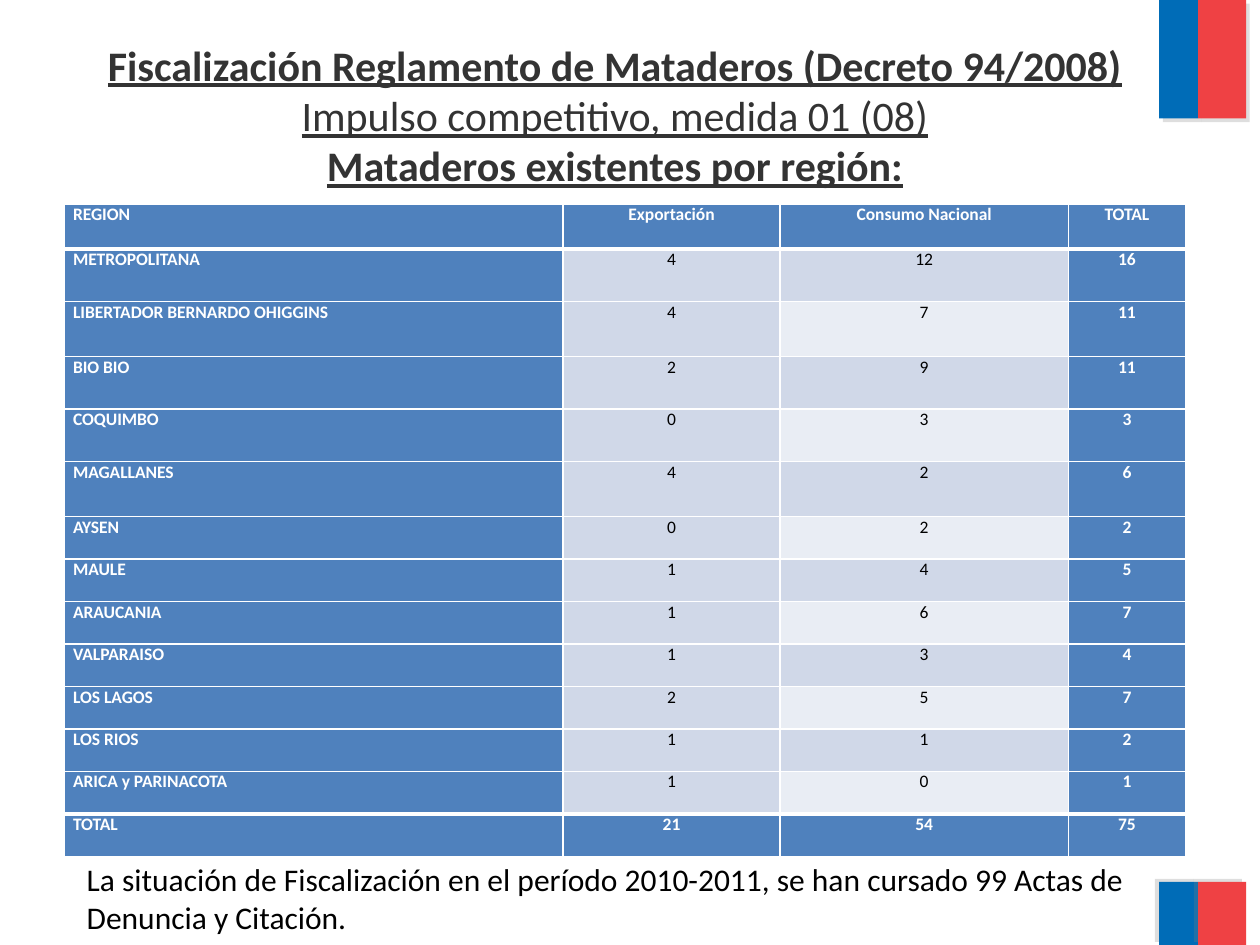
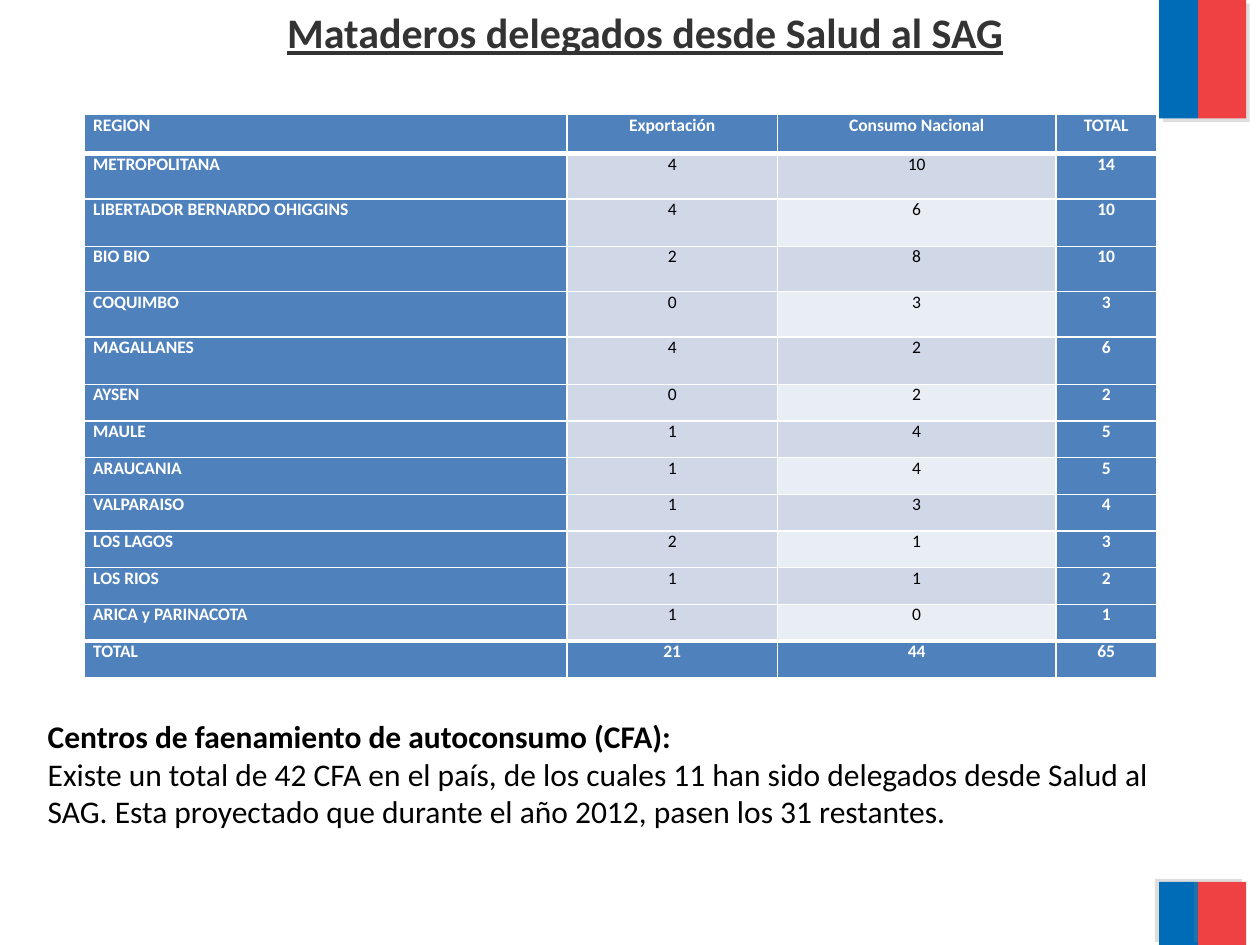
import lxml.etree
import pptx
import pptx.dml.color
import pptx.enum.shapes
import pptx.enum.text
import pptx.oxml
import pptx.oxml.ns
import pptx.util

Inches = pptx.util.Inches
Pt = pptx.util.Pt
ALIGN = pptx.enum.text.PP_ALIGN

COLORS = {
    "flag_blue": "006CB7",
    "flag_red": "EF4144",
    "shadow": "808080",
    "title": "333333",
    "text": "000000",
    "white": "FFFFFF",
    "header": "4F81BD",
    "band_dark": "D0D8E8",
    "band_light": "E9EDF4",
}
FONT = "Calibri"
HEADINGS = ["REGION", "Exportación", "Consumo Nacional", "TOTAL"]
REGIONS = [
    "METROPOLITANA", "LIBERTADOR BERNARDO OHIGGINS", "BIO BIO", "COQUIMBO",
    "MAGALLANES", "AYSEN", "MAULE", "ARAUCANIA", "VALPARAISO", "LOS LAGOS",
    "LOS RIOS", "ARICA y PARINACOTA",
]
EXPORT = [4, 4, 2, 0, 4, 0, 1, 1, 1, 2, 1, 1]
NATIONAL_EXISTING = [12, 7, 9, 3, 2, 2, 4, 6, 3, 5, 1, 0]
NATIONAL_DELEGATED = [10, 6, 8, 3, 2, 2, 4, 4, 3, 1, 1, 0]
ROW_WEIGHTS = [0.36, 0.42, 0.44, 0.42, 0.42, 0.44] + [0.34] * 8


def region_rows(national):
    """Return the table rows with the totals worked out."""
    rows = [
        [region, exported, consumed, exported + consumed]
        for region, exported, consumed in zip(REGIONS, EXPORT, national)
    ]
    totals = [sum(column) for column in list(zip(*rows))[1:]]
    return [HEADINGS, *rows, ["TOTAL", *totals]]


class SlideBuilder:
    """Hold the shared style and the slide being built."""

    def __init__(self, presentation):
        """Keep the presentation that receives the slides."""
        self.presentation = presentation
        self.slide = None

    def color(self, name):
        """Return a named colour."""
        return pptx.dml.color.RGBColor.from_string(COLORS[name])

    def start(self):
        """Add a slide with the flag bands at its right edge."""
        self.slide = self.presentation.slides.add_slide(
            self.presentation.slide_layouts[5])
        for top, height, angle in ((0, 0.94, 45), (7, 0.5, 215)):
            self.band(9.2, top, 0.31, height, "flag_blue", angle)
            self.band(9.51, top, 0.38, height, "flag_red", angle)

    def band(self, left, top, width, height, color, angle):
        """Add a flag band with a soft shadow."""
        shape = self.slide.shapes.add_shape(
            pptx.enum.shapes.MSO_SHAPE.RECTANGLE,
            Inches(left), Inches(top), Inches(width), Inches(height))
        shape.fill.solid()
        shape.fill.fore_color.rgb = self.color(color)
        shape.line.fill.background()
        shape.shadow.inherit = False
        effects = shape.element.spPr.find(pptx.oxml.ns.qn("a:effectLst"))
        effects.append(pptx.oxml.parse_xml(
            f'<a:outerShdw {pptx.oxml.ns.nsdecls("a")} blurRad="0" '
            f'dist="{Pt(3)}" dir="{angle * 60000}" algn="ctr" rotWithShape="0">'
            f'<a:srgbClr val="{COLORS["shadow"]}"><a:alpha val="25000"/>'
            '</a:srgbClr></a:outerShdw>'))

    def fill_text(self, frame, lines, size, color, align, underline=False):
        """Fill a text frame with (text, bold) paragraphs."""
        frame.word_wrap = True
        frame.auto_size = pptx.enum.text.MSO_AUTO_SIZE.NONE
        frame.vertical_anchor = pptx.enum.text.MSO_ANCHOR.TOP
        frame.text = "\n".join(text for text, bold in lines)
        for paragraph, (text, bold) in zip(frame.paragraphs, lines):
            paragraph.alignment = align
            self.style(paragraph, size, color, bold)
            paragraph.font.underline = underline

    def style(self, paragraph, size, color, bold):
        """Set the font of a paragraph."""
        paragraph.font.name = FONT
        paragraph.font.size = Pt(size)
        paragraph.font.bold = bold
        paragraph.font.color.rgb = self.color(color)

    def title(self, left, top, width, height, lines):
        """Place and fill the title placeholder."""
        title = self.slide.shapes.title
        title.left, title.top = Inches(left), Inches(top)
        title.width, title.height = Inches(width), Inches(height)
        self.fill_text(title.text_frame, lines, 24, "title", ALIGN.CENTER, True)

    def note(self, left, top, width, height, lines, align=ALIGN.LEFT):
        """Add a text box below the table."""
        box = self.slide.shapes.add_textbox(
            Inches(left), Inches(top), Inches(width), Inches(height))
        self.fill_text(box.text_frame, lines, 18, "text", align)

    def table(self, left, top, height, column_widths, rows):
        """Add the table of slaughterhouses by region."""
        table = self.slide.shapes.add_table(
            len(rows), len(column_widths), Inches(left), Inches(top),
            Inches(sum(column_widths)), Inches(height)).table
        for column, width in zip(table.columns, column_widths):
            column.width = Inches(width)
        for row, weight in zip(table.rows, ROW_WEIGHTS):
            row.height = Inches(height * weight / sum(ROW_WEIGHTS))
        last = len(rows) - 1
        for row_index, values in enumerate(rows):
            top_width = 3 if row_index in (1, last) else 1
            bottom_width = 3 if row_index in (0, last - 1) else 1
            for column_index, value in enumerate(values):
                cell = table.cell(row_index, column_index)
                heading = row_index in (0, last) or column_index in (0, 3)
                if heading:
                    fill = "header"
                elif column_index == 1 or row_index % 2:
                    fill = "band_dark"
                else:
                    fill = "band_light"
                self.borders(cell, top_width, bottom_width)
                self.cell(cell, str(value), fill, heading, column_index == 0)

    def cell(self, cell, text, fill, heading, first_column):
        """Fill and format one table cell."""
        cell.fill.solid()
        cell.fill.fore_color.rgb = self.color(fill)
        cell.margin_left = cell.margin_right = Inches(0.07)
        cell.margin_top = cell.margin_bottom = 0
        cell.text = text
        paragraph = cell.text_frame.paragraphs[0]
        paragraph.alignment = ALIGN.JUSTIFY if first_column else ALIGN.CENTER
        self.style(paragraph, 10, "white" if heading else "text", heading)

    def borders(self, cell, top_width, bottom_width):
        """Draw the white borders of a cell."""
        qn = pptx.oxml.ns.qn
        properties = cell._tc.get_or_add_tcPr()
        widths = {"lnL": 1, "lnR": 1, "lnT": top_width, "lnB": bottom_width}
        for side, width in widths.items():
            line = lxml.etree.SubElement(
                properties, qn(f"a:{side}"), w=str(Pt(width)))
            fill = lxml.etree.SubElement(line, qn("a:solidFill"))
            lxml.etree.SubElement(fill, qn("a:srgbClr"), val=COLORS["white"])


def main():
    """Build both slides and save the presentation."""
    presentation = pptx.Presentation()
    presentation.slide_width = Inches(10)
    presentation.slide_height = Inches(7.5)
    builder = SlideBuilder(presentation)

    builder.start()
    builder.table(0.51, 1.62, 5.18, [3.96, 1.72, 2.29, 0.93],
                  region_rows(NATIONAL_EXISTING))
    builder.title(0.12, 0.26, 9.52, 1.62, [
        ("Fiscalización Reglamento de Mataderos (Decreto 94/2008)", True),
        ("Impulso competitivo, medida 01 (08)", False),
        ("Mataderos existentes por región:", True),
    ])
    builder.note(0.59, 6.78, 8.43, 0.71, [
        ("La situación de Fiscalización en el período 2010-2011, se han "
         "cursado 99 Actas de Denuncia y Citación.", False),
    ], ALIGN.JUSTIFY)

    builder.start()
    builder.table(0.67, 0.91, 4.47, [3.83, 1.67, 2.21, 0.8],
                  region_rows(NATIONAL_DELEGATED))
    builder.title(2.15, 0, 5.94, 0.91,
                  [("Mataderos delegados desde Salud al SAG", True)])
    builder.note(0.28, 5.64, 8.98, 1.31, [
        ("Centros de faenamiento de autoconsumo (CFA):", True),
        ("Existe un total de 42 CFA en el país, de los cuales 11 han sido "
         "delegados desde Salud al SAG. Esta proyectado que durante el año "
         "2012, pasen los 31 restantes.", False),
    ])

    presentation.save("out.pptx")


if __name__ == "__main__":
    main()
